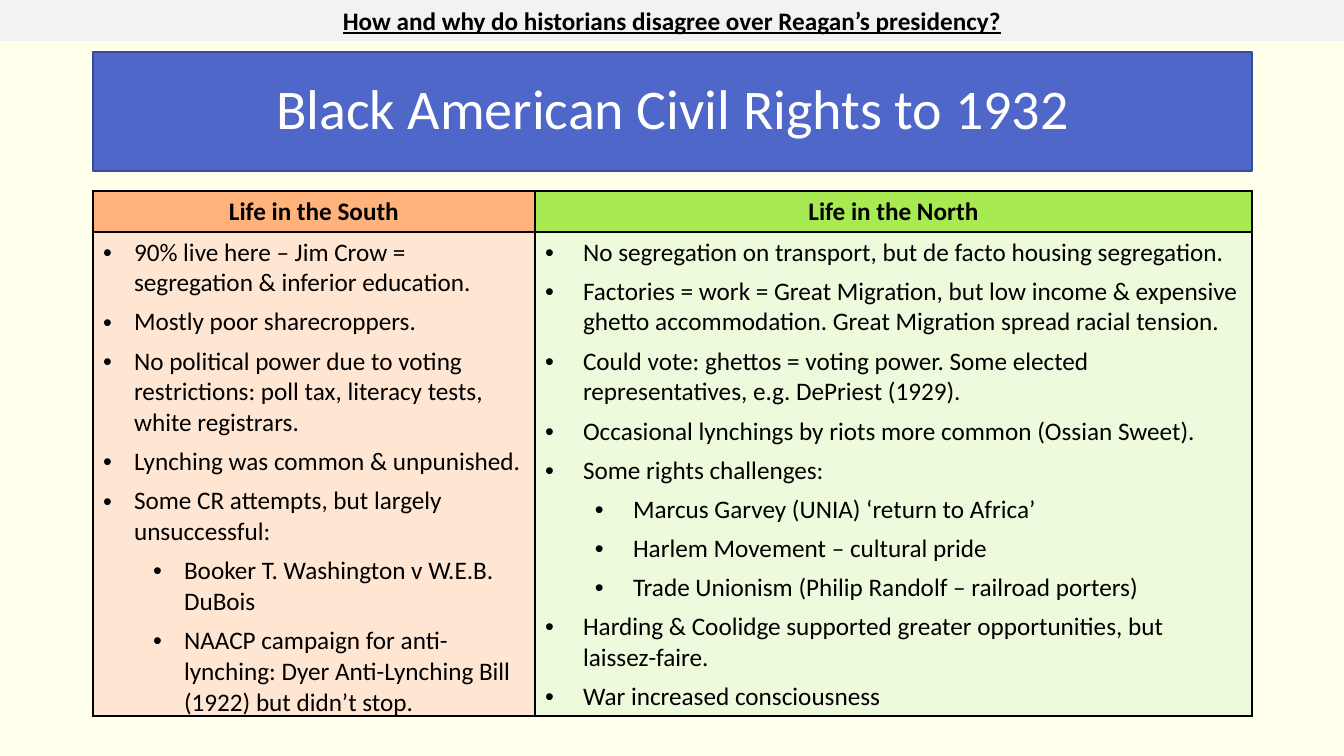
import pptx
import pptx.util
import pptx.dml.color
import pptx.enum.text
import pptx.oxml
import pptx.oxml.ns

PX = 914400 / 100.8
COLOURS = {
    "page": "FFFFEB", "banner": "4E67C8", "banner_line": "3A4C94",
    "strip": "F2F2F2", "white": "FFFFFF", "black": "000000",
    "south_head": "FFB37A", "north_head": "A7EA52",
    "south": "FFE6D3", "north": "EDFBDC",
}
NS = pptx.oxml.ns.nsdecls("a")
CENTER = pptx.enum.text.PP_ALIGN.CENTER
LEFT = pptx.enum.text.PP_ALIGN.LEFT


def px(length):
    return pptx.util.Emu(round(length * PX))


def write(para, text, size=18, colour="black", bold=False, underline=False,
          align=CENTER, indent=0, level=0, after=0):
    para.alignment = align
    para.level = level
    para.space_after = pptx.util.Pt(after)
    span = para.add_run()
    span.text = text
    span.font.name = "Calibri"
    span.font.size = pptx.util.Pt(size)
    span.font.bold = bold
    span.font.underline = underline
    span.font.color.rgb = pptx.dml.color.RGBColor.from_string(COLOURS[colour])
    if indent:
        props = para._p.get_or_add_pPr()
        props.set("marL", str(px(indent + 50 * level)))
        props.set("indent", str(-px(indent)))
        props.append(pptx.oxml.parse_xml(f'<a:buFont {NS} typeface="Arial"/>'))
        props.append(pptx.oxml.parse_xml(f'<a:buChar {NS} char="•"/>'))


deck = pptx.Presentation()
deck.slide_width, deck.slide_height = px(1344), px(756)
page = deck.slides.add_slide(deck.slide_layouts[5])
page.background.fill.solid()
page.background.fill.fore_color.rgb = pptx.dml.color.RGBColor.from_string(COLOURS["page"])

title = page.shapes.title
title.left, title.top, title.width, title.height = px(93), px(52), px(1159), px(119)
title.line.color.rgb = pptx.dml.color.RGBColor.from_string(COLOURS["banner_line"])
title.line.width = pptx.util.Pt(1)
title.text_frame.vertical_anchor = pptx.enum.text.MSO_ANCHOR.MIDDLE
heading = title.text_frame.paragraphs[0]
heading.line_spacing = 0.9
write(heading, "Black American Civil Rights to 1932", size=40, colour="white")

strip = page.shapes.add_textbox(0, 0, px(1344), px(41))
strip.text_frame.word_wrap = True
strip.text_frame.auto_size = pptx.enum.text.MSO_AUTO_SIZE.SHAPE_TO_FIT_TEXT
write(strip.text_frame.paragraphs[0],
      "How and why do historians disagree over Reagan’s presidency?",
      bold=True, underline=True)

for box, colour in ((title, "banner"), (strip, "strip")):
    box.fill.solid()
    box.fill.fore_color.rgb = pptx.dml.color.RGBColor.from_string(COLOURS[colour])

regions = [
    ("Life in the South", "south", 442, 31, [
        (0, "90% live here – Jim Crow = segregation & inferior education."),
        (0, "Mostly poor sharecroppers."),
        (0, "No political power due to voting restrictions: poll tax, literacy tests, white registrars."),
        (0, "Lynching was common & unpunished."),
        (0, "Some CR attempts, but largely unsuccessful:"),
        (1, "Booker T. Washington v W.E.B. DuBois"),
        (1, "NAACP campaign for anti-lynching: Dyer Anti-Lynching Bill (1922) but didn’t stop."),
    ]),
    ("Life in the North", "north", 717, 38, [
        (0, "No segregation on transport, but de facto housing segregation."),
        (0, "Factories = work = Great Migration, but low income & expensive ghetto accommodation. "
            "Great Migration spread racial tension."),
        (0, "Could vote: ghettos = voting power. Some elected representatives, e.g. DePriest (1929)."),
        (0, "Occasional lynchings by riots more common (Ossian Sweet)."),
        (0, "Some rights challenges:"),
        (1, "Marcus Garvey (UNIA) ‘return to Africa’"),
        (1, "Harlem Movement – cultural pride"),
        (1, "Trade Unionism (Philip Randolf – railroad porters)"),
        (0, "Harding & Coolidge supported greater opportunities, but laissez-faire."),
        (0, "War increased consciousness"),
    ]),
]

table = page.shapes.add_table(2, 2, px(93), px(191), px(1159), px(525)).table
table.first_row = table.horz_banding = False
table.rows[0].height, table.rows[1].height = px(41), px(484)

for column, (region, colour, width, indent, points) in enumerate(regions):
    table.columns[column].width = px(width)
    head, body = table.cell(0, column), table.cell(1, column)
    write(head.text_frame.paragraphs[0], region, bold=True)
    for index, (level, point) in enumerate(points):
        para = body.text_frame.add_paragraph() if index else body.text_frame.paragraphs[0]
        write(para, point, align=LEFT, indent=indent, level=level, after=6)
    for cell, shade in ((head, colour + "_head"), (body, colour)):
        for side in ("lnL", "lnR", "lnT", "lnB"):
            cell._tc.get_or_add_tcPr().append(pptx.oxml.parse_xml(
                f'<a:{side} {NS} w="12700"><a:solidFill>'
                f'<a:srgbClr val="{COLOURS["black"]}"/></a:solidFill></a:{side}>'))
        cell.fill.solid()
        cell.fill.fore_color.rgb = pptx.dml.color.RGBColor.from_string(COLOURS[shade])

deck.save("out.pptx")
